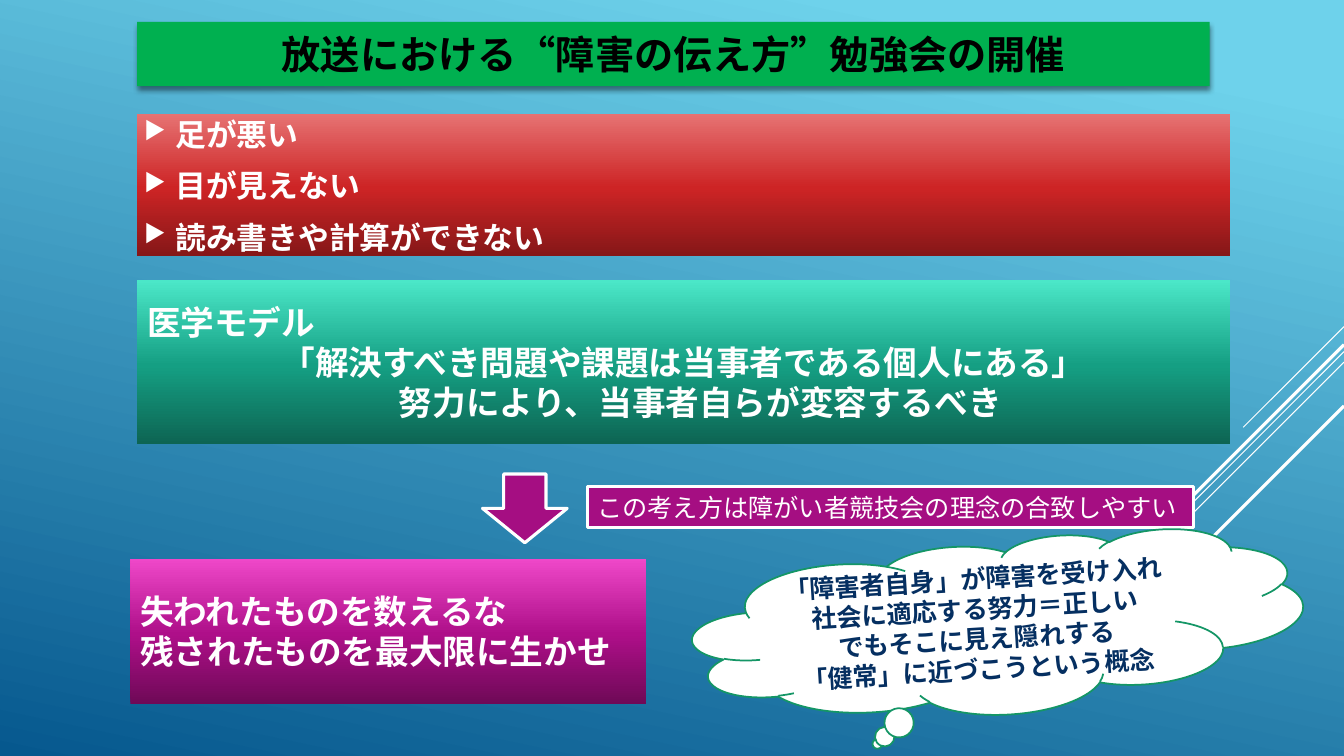
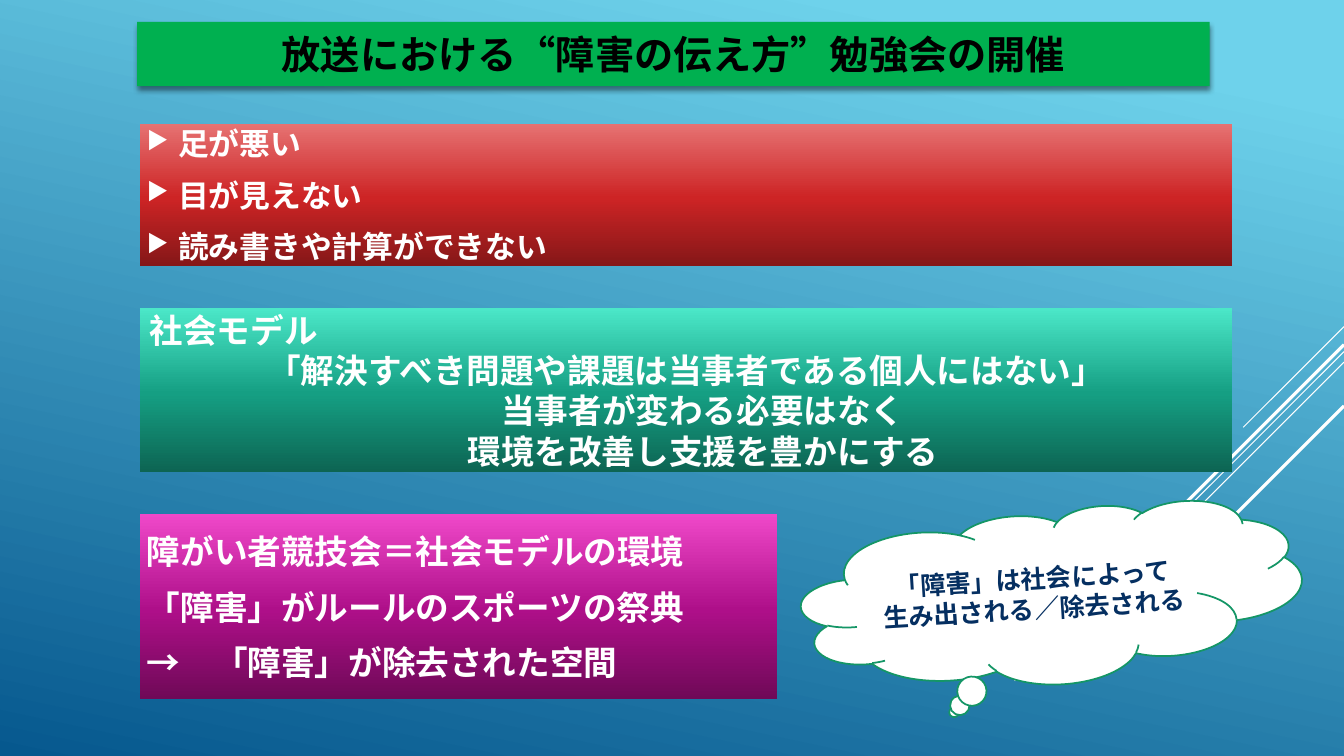
from lxml.etree import SubElement
from pptx import Presentation
from pptx.dml.color import RGBColor
from pptx.enum.shapes import MSO_CONNECTOR, MSO_SHAPE
from pptx.enum.text import MSO_ANCHOR, PP_ALIGN
from pptx.oxml.ns import qn
from pptx.util import Inches, Pt

deck = Presentation()
deck.slide_width, deck.slide_height = Inches(13.33), Inches(7.5)
WIDE, HIGH = deck.slide_width / 100, deck.slide_height / 100  # one percent
hue = RGBColor.from_string


def grade(fill, root, stops, angle):
    """Fill with a gradient; the angle runs counter-clockwise."""
    fill.gradient()
    fill.gradient_angle = angle
    part = root.find(".//" + qn("a:gsLst"))
    for old in list(part):
        part.remove(old)
    for pos, tint in stops:
        stop = SubElement(part, qn("a:gs"), pos=str(pos * 1000))
        SubElement(stop, qn("a:srgbClr"), val=tint)


# Shared looks
BOLD = {"size": 24, "bold": True, "name": "Arial", "ink": "FFFFFF"}
THIN = {"margin_left": Inches(0.07), "margin_right": Inches(0.07),
        "margin_top": Inches(0.04), "margin_bottom": Inches(0.04)}
LOOKS = {
    "title": {**BOLD, "size": 28, "ink": "000000", "fill": "00B050",
              "inset": THIN, "shade": True},
    "red": {**BOLD, "size": 22, "inset": THIN, "gap": True, "bullet": "▶",
            "fill": [(0, "851718"), (48, "CD2425"), (100, "E67272")]},
    "green": {**BOLD, "fill": [(0, "0D6553"), (48, "159F83"), (100, "4BE7C8")]},
    "pink": {**BOLD, "fill": [(0, "6F0957"), (48, "AE0F89"), (100, "EF48C9")]},
    "label": {**BOLD, "size": 18, "bold": False, "name": "Noto Sans CJK JP",
              "fill": "A50E82", "line": ("FFFFFF", 2.25)},
    "cloud": {**BOLD, "size": 18, "name": "TeX Gyre Adventor", "ink": "052F61",
              "fill": "FFFFFF", "line": ("149666", 1.25), "turn": 356.5},
}
LOOKS["list"] = {**LOOKS["pink"], "inset": THIN, "gap": True}

# Paragraph forms: flush left, centred, centred one character to the right
LEFT, MID, NUDGE = (PP_ALIGN.LEFT, 0), (PP_ALIGN.CENTER, 0), (PP_ALIGN.CENTER, 1)


def put(slide, kind, box, look, lines=(), form=LEFT):
    """Place a shape; box holds percent of the slide's width and height."""
    x, y, w, h = box
    shape = slide.shapes.add_shape(kind, int(x * WIDE), int(y * HIGH),
                                   int(w * WIDE), int(h * HIGH))
    shape.shadow.inherit = False
    shape.rotation = look.get("turn", 0)
    if isinstance(look["fill"], str):
        shape.fill.solid()
        shape.fill.fore_color.rgb = hue(look["fill"])
    else:
        grade(shape.fill, shape.element, look["fill"], 90)
    if "line" in look:
        shape.line.color.rgb = hue(look["line"][0])
        shape.line.width = Pt(look["line"][1])
    else:
        shape.line.fill.background()
    if "shade" in look:
        glow = SubElement(shape.element.spPr.find(qn("a:effectLst")),
                          qn("a:outerShdw"), blurRad=str(Pt(4)),
                          dist=str(Pt(3)), dir="5400000", rotWithShape="0")
        tint = SubElement(glow, qn("a:srgbClr"), val="000000")
        SubElement(tint, qn("a:alpha"), val="46000")

    frame = shape.text_frame
    frame.word_wrap = True
    frame.vertical_anchor = MSO_ANCHOR.MIDDLE
    for name, value in look.get("inset", {}).items():
        setattr(frame, name, value)
    size = look["size"]
    for i, line in enumerate(lines):
        text, (align, shift) = line if isinstance(line, tuple) else (line, form)
        para = frame.add_paragraph() if i else frame.paragraphs[0]
        gap = "gap" in look
        rules = {"alignment": align, "line_spacing": Pt(1.2 * size),
                 "space_before": Pt(0.2 * size * gap), "space_after": Pt(6 * gap)}
        for name, value in rules.items():
            setattr(para, name, value)
        run = para.add_run()
        run.text = text
        font = {"size": Pt(size), "bold": look["bold"], "name": look["name"]}
        for name, value in font.items():
            setattr(run.font, name, value)
        run.font.color.rgb = hue(look["ink"])
        SubElement(run.font._element, qn("a:ea"), typeface="Noto Sans CJK JP")
        props = para._p.get_or_add_pPr()
        if shift:
            props.set("marL", str(Pt(size * shift)))
        if "bullet" in look:
            props.set("marL", str(Inches(0.31)))
            props.set("indent", str(-Inches(0.31)))
            mark = SubElement(props, qn("a:buClr"))
            SubElement(mark, qn("a:srgbClr"), val=look["ink"])
            SubElement(props, qn("a:buSzPct"), val="80000")
            SubElement(props, qn("a:buChar"), char=look["bullet"])


# Background on the master
master = deck.slide_master
grade(master.background.fill, master.element,
      [(10, "6ED2EB"), (100, "06588E")], 258)

# Diagonal rays from the right edge: start height, run, weight
RAYS = [(43.2, 7.5, 0.75), (46.5, 24.5, 0.75), (47.9, 15.5, 0.75),
        (45.6, 14.3, 2.25), (53.7, 10.4, 2.25)]
TITLE = "放送における“障害の伝え方”勉強会の開催"
WOES = ["足が悪い", "目が見えない", "読み書きや計算ができない"]
RECT, ARROW, CLOUD = (MSO_SHAPE.RECTANGLE, MSO_SHAPE.DOWN_ARROW,
                      MSO_SHAPE.CLOUD_CALLOUT)

# Each slide: left edge and tops of the two wide bands, then its own parts
SLIDES = [
    (10.2, 15.1, 37.1,
     ["医学モデル",
      ("「解決すべき問題や課題は当事者である個人にある」", MID),
      ("努力により、当事者自らが変容するべき", NUDGE)],
     [(ARROW, (35.9, 62.7, 6.3, 9.1), "label", [], LEFT),
      (RECT, (43.7, 64.4, 45.1, 5.4), "label",
       ["この考え方は障がい者競技会の理念の合致しやすい"], LEFT),
      (RECT, (9.7, 73.9, 38.4, 19.2), "pink",
       ["失われたものを数えるな", "残されたものを最大限に生かせ"], LEFT),
      (CLOUD, (51.5, 71.3, 45.5, 23.2), "cloud",
       ["「障害者自身」が障害を受け入れ社会に適応する努力＝正しい",
        "でもそこに見え隠れする", "「健常」に近づこうという概念"], MID)]),
    (10.4, 16.4, 40.8,
     ["社会モデル",
      ("「解決すべき問題や課題は当事者である個人にはない」", MID),
      ("当事者が変わる必要はなく", NUDGE),
      ("環境を改善し支援を豊かにする", NUDGE)],
     [(CLOUD, (59.6, 67.3, 37.3, 23.2), "cloud",
       ["「障害」は社会によって", "生み出される／除去される"], MID),
      (RECT, (10.4, 68, 47.4, 24.5), "list",
       ["障がい者競技会＝社会モデルの環境", "「障害」がルールのスポーツの祭典",
        "→　「障害」が除去された空間"], LEFT)]),
]

for left, top, low, model, parts in SLIDES:
    slide = deck.slides.add_slide(deck.slide_layouts[6])
    # Rays at 45 degrees
    for y, run, weight in RAYS:
        reach = run * WIDE
        ray = slide.shapes.add_connector(
            MSO_CONNECTOR.STRAIGHT, int(100 * WIDE), int(y * HIGH),
            int(100 * WIDE - reach), int(y * HIGH + reach))
        ray.line.color.rgb = hue("FFFFFF")
        ray.line.width = Pt(weight)
        SubElement(ray.element.spPr, qn("a:effectLst"))
    # Wide bands, own parts, title
    put(slide, RECT, (left, top, 81.3, 18.8), LOOKS["red"], WOES)
    put(slide, RECT, (left, low, 81.3, 21.6), LOOKS["green"], model)
    for kind, box, look, lines, form in parts:
        put(slide, kind, box, LOOKS[look], lines, form)
    put(slide, RECT, (10.2, 2.9, 79.8, 8.5), LOOKS["title"], [TITLE], MID)

deck.save("out.pptx")
